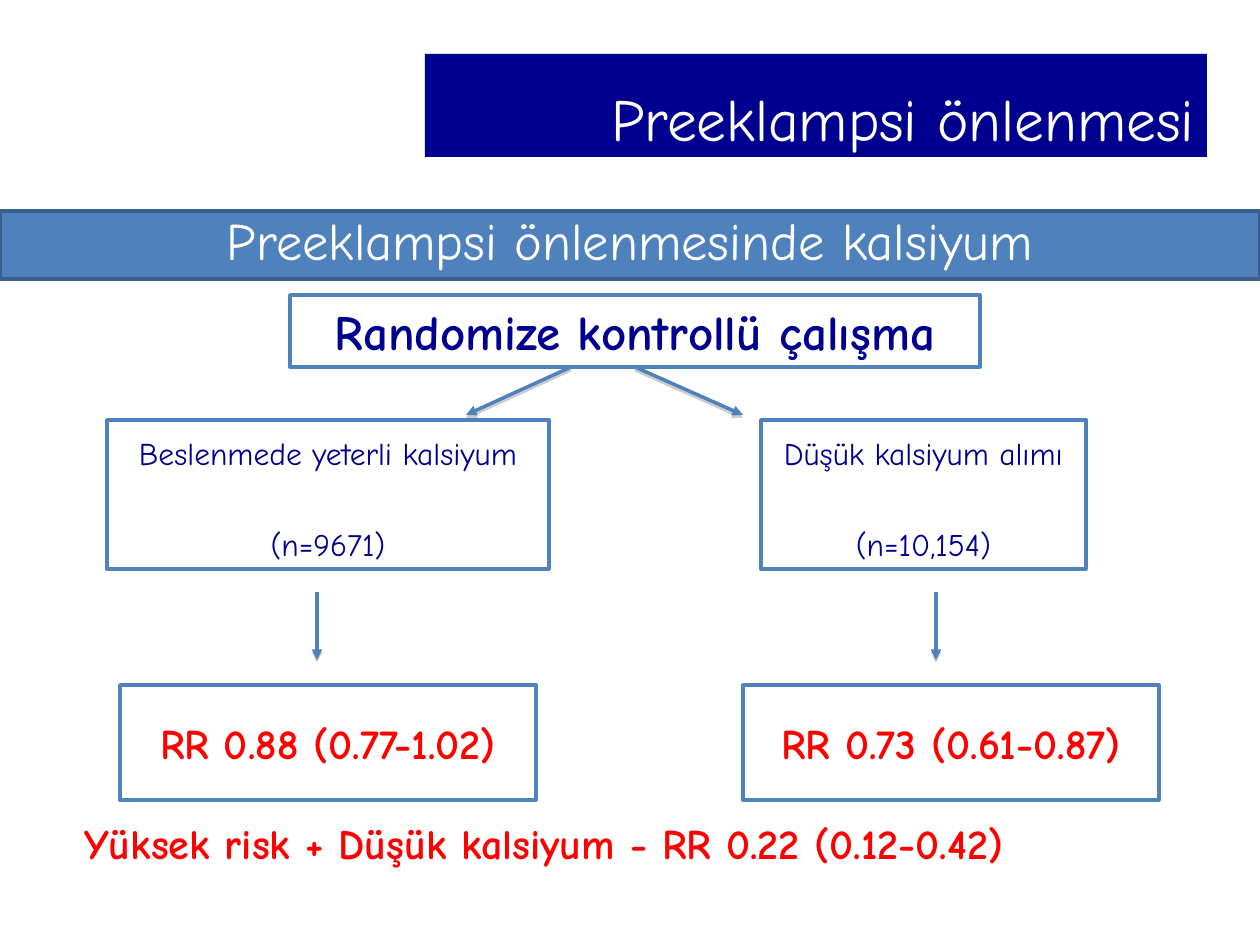
"""Builds a slide on calcium in preeclampsia prevention as a two-arm flow chart."""
import pptx
import pptx.dml.color
import pptx.enum.shapes
import pptx.enum.text
import pptx.util
from lxml import etree

RGBColor = pptx.dml.color.RGBColor
NAVY = RGBColor(0x00, 0x00, 0x90)
BLUE = RGBColor(0x4F, 0x81, 0xBD)
DARK_BLUE = RGBColor(0x3A, 0x5F, 0x8C)
RED = RGBColor(0xFF, 0x00, 0x00)
WHITE = RGBColor(0xFF, 0xFF, 0xFF)
FONT = "Comic Neue"
PX = 914400 / 126
ALIGN = pptx.enum.text.PP_ALIGN
ANCHOR = pptx.enum.text.MSO_ANCHOR
ARROW_EFFECT = (
    '<a:effectLst xmlns:a="http://schemas.openxmlformats.org/drawingml/2006/main">'
    '<a:outerShdw blurRad="0" dist="20000" dir="5400000" rotWithShape="0">'
    '<a:srgbClr val="808080"><a:alpha val="38000"/></a:srgbClr>'
    '</a:outerShdw></a:effectLst>'
)

deck = pptx.Presentation()
deck.slide_width = round(1260 * PX)
deck.slide_height = round(945 * PX)
slide = deck.slides.add_slide(deck.slide_layouts[6])


def add_box(at, lines, size, color, fill=WHITE, outline=BLUE, bold=False,
            align=ALIGN.CENTER, spacing=1.0, gap=0, anchor=ANCHOR.TOP):
    box = slide.shapes.add_shape(
        pptx.enum.shapes.MSO_SHAPE.RECTANGLE, *[round(n * PX) for n in at])
    box.shadow.inherit = False
    box.fill.solid()
    box.fill.fore_color.rgb = fill
    if outline is None:
        box.line.fill.background()
    else:
        box.line.color.rgb = outline
        box.line.width = pptx.util.Pt(2)
    write(box.text_frame, lines, size, color, bold, align, spacing, gap, anchor)


def write(frame, lines, size, color, bold, align, spacing=1.0, gap=0, anchor=ANCHOR.TOP):
    frame.word_wrap = True
    frame.vertical_anchor = anchor
    frame.text = "\n".join(lines)
    for row, paragraph in enumerate(frame.paragraphs):
        paragraph.alignment = align
        paragraph.line_spacing = spacing
        paragraph.space_before = pptx.util.Pt(gap if row else 0)
        paragraph.font.name = FONT
        paragraph.font.size = pptx.util.Pt(size)
        paragraph.font.bold = bold
        paragraph.font.color.rgb = color


add_box((425, 54, 782, 103), ["Preeklampsi önlenmesi"], 34, WHITE,
        fill=NAVY, outline=None, align=ALIGN.RIGHT, spacing=1.3)
add_box((0, 211, 1260, 68), ["Preeklampsi önlenmesinde kalsiyum"], 30, WHITE,
        fill=BLUE, outline=DARK_BLUE, spacing=0.85)
add_box((290, 295, 690, 72), ["Randomize kontrollü çalışma"], 28, NAVY, bold=True)

arms = [
    (107, 442, ["Beslenmede yeterli kalsiyum", "(n=9671)"], 120, "RR 0.88 (0.77-1.02)"),
    (761, 325, ["Düşük kalsiyum alımı", "(n=10,154)"], 743, "RR 0.73 (0.61-0.87)"),
]
for arm_left, arm_width, arm_lines, risk_left, risk in arms:
    add_box((arm_left, 420, arm_width, 149), arm_lines, 18, NAVY, spacing=1.2, gap=26)
    add_box((risk_left, 685, 416, 115), [risk], 24, RED, bold=True, anchor=ANCHOR.MIDDLE)

arrows = [
    (571, 367, 466, 415),
    (635, 367, 743, 415),
    (317, 592, 317, 660),
    (936, 592, 936, 660),
]
for ends in arrows:
    arrow = slide.shapes.add_connector(
        pptx.enum.shapes.MSO_CONNECTOR.STRAIGHT, *[round(n * PX) for n in ends])
    arrow.line.color.rgb = BLUE
    arrow.line.width = pptx.util.Pt(2)
    stroke = arrow.line._get_or_add_ln()
    etree.SubElement(stroke, pptx.oxml.ns.qn("a:tailEnd"), type="triangle")
    arrow._element.spPr.append(pptx.oxml.parse_xml(ARROW_EFFECT))

conclusion = slide.shapes.add_textbox(*[round(n * PX) for n in (72, 811, 1126, 63)])
write(conclusion.text_frame, ["Yüksek risk + Düşük kalsiyum - RR 0.22 (0.12-0.42)"],
      24, RED, True, ALIGN.LEFT)

deck.save("out.pptx")
